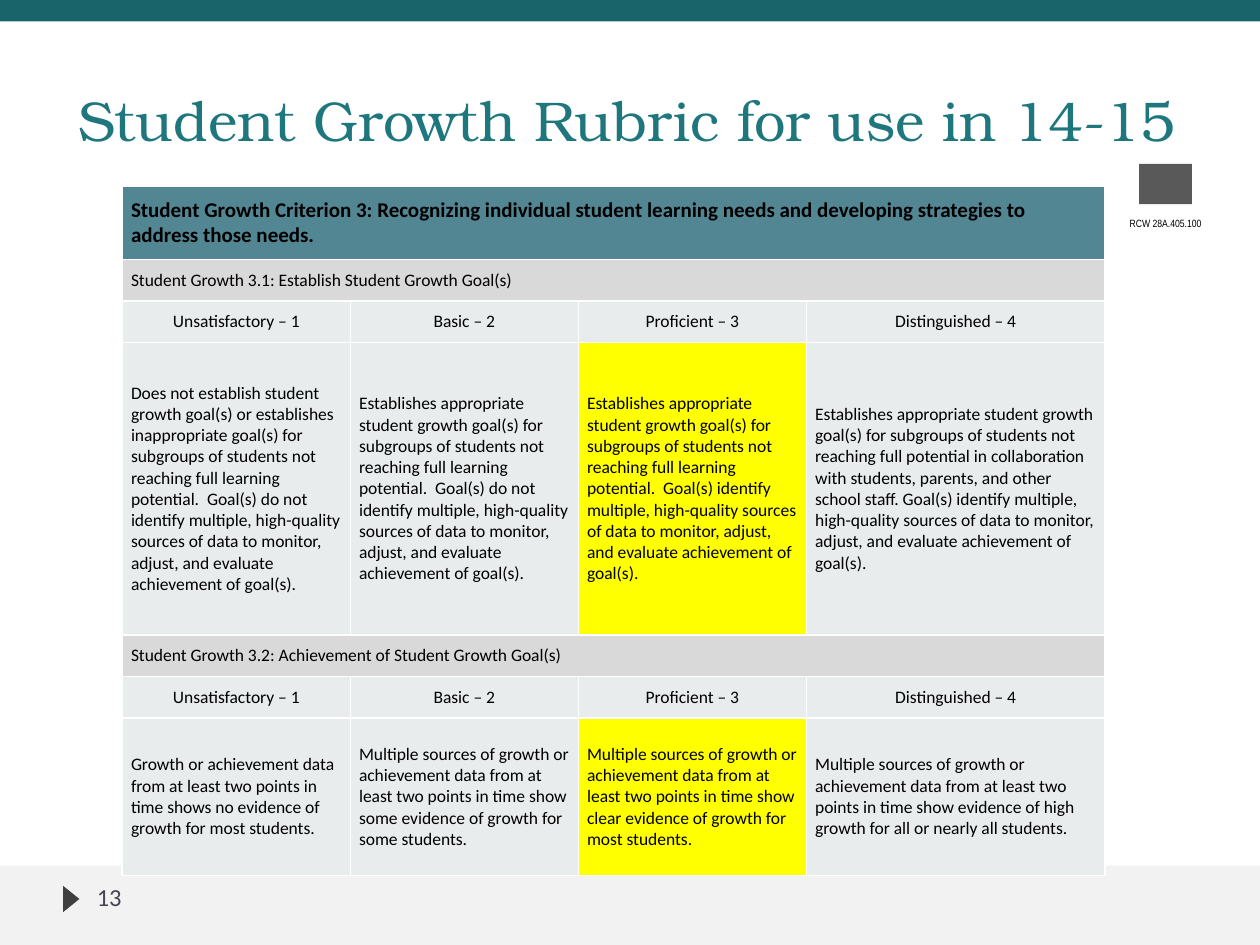
from lxml.etree import SubElement
from pptx import Presentation
from pptx.dml.color import RGBColor
from pptx.enum.shapes import MSO_SHAPE as SHAPE
from pptx.enum.text import MSO_ANCHOR as ANCHOR, MSO_AUTO_SIZE as AUTO, PP_ALIGN as ALIGN
from pptx.oxml.ns import qn
from pptx.util import Inches, Pt

COLORS = {
    "teal": "19646B", "title": "1F777E", "footer": "F2F2F2", "arrow": "3F3F3F",
    "number": "464653", "marker": "595959", "black": "000000", "white": "FFFFFF",
    "criterion": "528693", "section": "D9D9D9", "cell": "E8ECEC", "highlight": "FFFF00",
}
COL_WIDTHS = [1.81, 1.81, 1.81, 2.37]
ROW_HEIGHTS = [0.58, 0.33, 0.33, 2.32, 0.33, 0.33, 1.25]
LEVELS = ["Unsatisfactory – 1", "Basic – 2", "Proficient – 3", "Distinguished – 4"]
PROFICIENT = 2

CRITERION = ("Student Growth Criterion 3: Recognizing individual student learning needs "
             "and developing strategies to address those needs.")
SECTIONS = [
    ("Student Growth 3.1: Establish Student Growth Goal(s)", [
        "Does not establish student growth goal(s) or establishes inappropriate goal(s) for "
        "subgroups of students not reaching full learning potential.  Goal(s) do not identify "
        "multiple, high-quality sources of data to monitor, adjust, and evaluate achievement "
        "of goal(s).",
        "Establishes appropriate student growth goal(s) for subgroups of students not reaching "
        "full learning potential.  Goal(s) do not identify multiple, high-quality sources of "
        "data to monitor, adjust, and evaluate achievement of goal(s).",
        "Establishes appropriate student growth goal(s) for subgroups of students not reaching "
        "full learning potential.  Goal(s) identify multiple, high-quality sources of data to "
        "monitor, adjust, and evaluate achievement of goal(s).",
        "Establishes appropriate student growth goal(s) for subgroups of students not reaching "
        "full potential in collaboration with students, parents, and other school staff. "
        "Goal(s) identify multiple, high-quality sources of data to monitor, adjust, and "
        "evaluate achievement of goal(s).",
    ]),
    ("Student Growth 3.2: Achievement of Student Growth Goal(s)", [
        "Growth or achievement data from at least two points in time shows no evidence of "
        "growth for most students.",
        "Multiple sources of growth or achievement data from at least two points in time show "
        "some evidence of growth for some students.",
        "Multiple sources of growth or achievement data from at least two points in time show "
        "clear evidence of growth for most students.",
        "Multiple sources of growth or achievement data from at least two points in time show "
        "evidence of high growth for all or nearly all students.",
    ]),
]


def rgb(name):
    return RGBColor.from_string(COLORS[name])


def add_run(p, text, size, font, color, bold=False):
    r = p.add_run()
    r.text = text
    r.font.size = Pt(size)
    r.font.name = font
    r.font.bold = bold
    r.font.color.rgb = rgb(color)


def add_block(s, kind, box, color):
    sp = s.shapes.add_shape(kind, *map(Inches, box))
    sp.shadow.inherit = False
    sp.fill.solid()
    sp.fill.fore_color.rgb = rgb(color)
    sp.line.fill.background()
    return sp


def add_text_box(s, box):
    tf = s.shapes.add_textbox(*map(Inches, box)).text_frame
    tf.word_wrap = True
    return tf


def add_title(s, box):
    title = s.shapes.title
    title.left, title.top, title.width, title.height = map(Inches, box)
    tf = title.text_frame
    tf.vertical_anchor = ANCHOR.BOTTOM
    tf.auto_size = AUTO.NONE
    p = tf.paragraphs[0]
    p.alignment = ALIGN.LEFT
    add_run(p, "Student Growth Rubric for use in 14-15", 32, "TeX Gyre Bonum", "title")


def add_footer(s, box):
    left, top, width, height = box
    add_block(s, SHAPE.RECTANGLE, box, "footer")
    arrow = add_block(s, SHAPE.ISOSCELES_TRIANGLE,
                      (left + 0.46, top + 0.2, 0.21, 0.13), "arrow")
    arrow.rotation = 90
    tf = add_text_box(s, (left + 0.67, top + 0.08, 2.17, 0.4))
    add_run(tf.paragraphs[0], "13", 14, "Calibri", "number")


def add_citation(s, box):
    left, top, width, height = box
    marker_width, label_height = 0.42, 0.22
    # Plain marker above the citation
    add_block(s, SHAPE.RECTANGLE,
              (left + (width - marker_width) / 2, top + 0.22, marker_width, 0.32), "marker")
    tf = add_text_box(s, (left, top + height - label_height, width, label_height))
    p = tf.paragraphs[0]
    p.alignment = ALIGN.CENTER
    add_run(p, "RCW 28A.405.100", 6, "Arial Narrow", "black")


def set_borders(cell):
    pr = cell._tc.get_or_add_tcPr()
    for i, side in enumerate(("lnL", "lnR", "lnT", "lnB")):
        ln = pr.makeelement(qn(f"a:{side}"), {"w": str(Pt(1))})
        fill = SubElement(ln, qn("a:solidFill"))
        SubElement(fill, qn("a:srgbClr"), val=COLORS["white"])
        pr.insert(i, ln)


def fill_cell(cell, text, color, size=10, bold=False, align=ALIGN.LEFT):
    cell.fill.solid()
    cell.fill.fore_color.rgb = rgb(color)
    cell.vertical_anchor = ANCHOR.MIDDLE
    cell.margin_left = cell.margin_right = Inches(0.07)
    cell.margin_top = cell.margin_bottom = Inches(0.07)
    p = cell.text_frame.paragraphs[0]
    p.alignment = align
    p.space_after = Pt(5)
    add_run(p, text, size, "Calibri", "black", bold)


def add_rubric(s, box):
    rows, cols = len(ROW_HEIGHTS), len(COL_WIDTHS)
    table = s.shapes.add_table(rows, cols, *map(Inches, box)).table
    for col, width in zip(table.columns, COL_WIDTHS):
        col.width = Inches(width)
    for row, height in zip(table.rows, ROW_HEIGHTS):
        row.height = Inches(height)
    for cell in table.iter_cells():
        set_borders(cell)

    def fill_banner(row, text, color, **style):
        table.cell(row, 0).merge(table.cell(row, cols - 1))
        fill_cell(table.cell(row, 0), text, color, **style)

    fill_banner(0, CRITERION, "criterion", size=12, bold=True)
    # Each section: heading row, level names, descriptions
    for i, (heading, descriptions) in enumerate(SECTIONS):
        row = 1 + 3 * i
        fill_banner(row, heading, "section")
        for col, (level, description) in enumerate(zip(LEVELS, descriptions)):
            fill_cell(table.cell(row + 1, col), level, "cell", align=ALIGN.CENTER)
            color = "highlight" if col == PROFICIENT else "cell"
            fill_cell(table.cell(row + 2, col), description, color)


def main():
    prs = Presentation()
    prs.slide_width, prs.slide_height = Inches(10), Inches(7.5)
    s = prs.slides.add_slide(prs.slide_layouts[5])
    # Frame
    add_footer(s, (0, 6.87, 10, 0.63))
    add_block(s, SHAPE.RECTANGLE, (0, 0, 10, 0.17), "teal")
    # Content
    add_title(s, (0.52, 0.14, 9.02, 1.12))
    add_citation(s, (8.79, 1.08, 0.92, 0.81))
    add_rubric(s, (0.97, 1.48, sum(COL_WIDTHS), sum(ROW_HEIGHTS)))
    prs.save("out.pptx")


if __name__ == "__main__":
    main()
